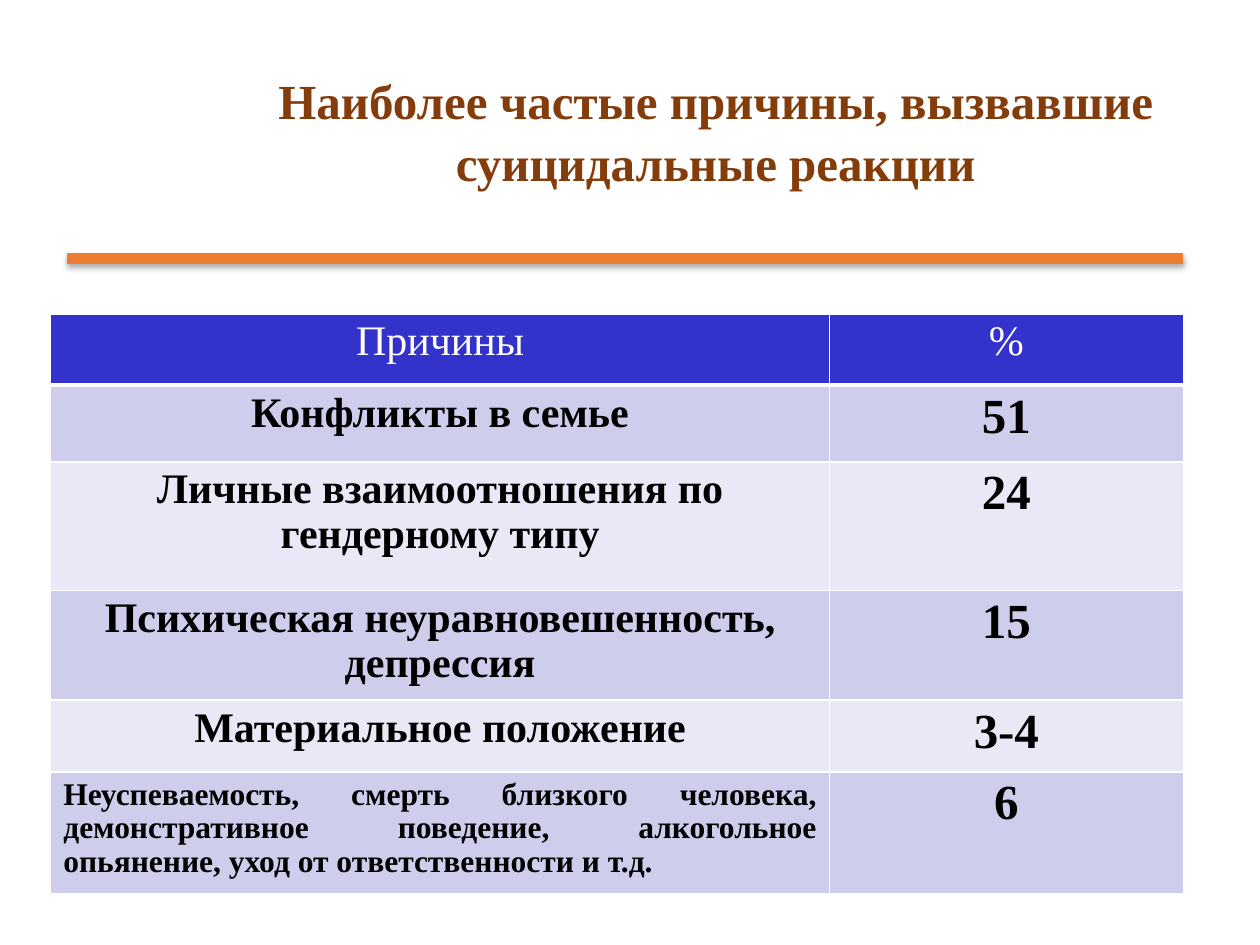
import pptx
import pptx.dml.color
import pptx.enum.shapes
import pptx.enum.text
import pptx.oxml
import pptx.oxml.ns
import pptx.util

Pt = pptx.util.Pt
ALIGN = pptx.enum.text.PP_ALIGN
NAMESPACE = pptx.oxml.ns.nsdecls("a")


def color(value):
    return pptx.dml.color.RGBColor.from_string(value)


def write(frame, text, size=24, fill="000000", bold=True, align=ALIGN.CENTER, spacing=0.96):
    frame.word_wrap = True
    para = frame.paragraphs[0]
    para.alignment = align
    para.line_spacing = spacing
    span = para.add_run()
    span.text = text
    span.font.name = "Times New Roman"
    span.font.size = Pt(size)
    span.font.bold = bold
    span.font.color.rgb = color(fill)


deck = pptx.Presentation()
deck.slide_width, deck.slide_height = Pt(720), Pt(540)
page = deck.slides.add_slide(deck.slide_layouts[6])

# Title
box = page.shapes.add_textbox(Pt(147.6), Pt(31.7), Pt(522.7), Pt(84.2))
box.text_frame.vertical_anchor = pptx.enum.text.MSO_ANCHOR.MIDDLE
write(box.text_frame, "Наиболее частые причины, вызвавшие суицидальные реакции",
      size=28, fill="843C0B", spacing=1.05)

# Orange rule with a soft shadow
rule = page.shapes.add_connector(pptx.enum.shapes.MSO_CONNECTOR.STRAIGHT,
                                 Pt(38.2), Pt(147.6), Pt(676.1), Pt(147.6))
rule.line.color.rgb = color("ED7D31")
rule.line.width = Pt(6)
rule._element.spPr.append(pptx.oxml.parse_xml(
    f'<a:effectLst {NAMESPACE}><a:outerShdw blurRad="{Pt(3.1)}" dist="{Pt(1.8)}" '
    'dir="5400000" rotWithShape="0"><a:srgbClr val="000000"><a:alpha val="35000"/>'
    '</a:srgbClr></a:outerShdw></a:effectLst>'))

# Table of causes
rows = [
    ("Причины", "%", 40.8),
    ("Конфликты в семье", "51", 43.9),
    ("Личные взаимоотношения по гендерному типу", "24", 73.6),
    ("Психическая неуравновешенность, депрессия", "15", 60.6),
    ("Материальное положение", "3-4", 41.1),
    ("Неуспеваемость, смерть близкого человека, демонстративное поведение, "
     "алкогольное опьянение, уход от ответственности и т.д.", "6", 66.3),
]
height = sum(row[2] for row in rows)
table = page.shapes.add_table(len(rows), 2, Pt(29), Pt(179.3), Pt(647.2), Pt(height)).table
table.columns[0].width, table.columns[1].width = Pt(445), Pt(202.2)

for row_index, (cause, share, row_height) in enumerate(rows):
    table.rows[row_index].height = Pt(row_height)
    header = row_index == 0
    last = row_index == len(rows) - 1
    band = "3333CC" if header else ("E8E8F6", "CECEEC")[row_index % 2]
    for column_index, text in enumerate((cause, share)):
        cell = table.cell(row_index, column_index)
        # White borders, heavier under the header
        for side in "LRTB":
            width = 3 if header and side == "B" else 1
            cell._tc.get_or_add_tcPr().append(pptx.oxml.parse_xml(
                f'<a:ln{side} {NAMESPACE} w="{Pt(width)}"><a:solidFill>'
                f'<a:srgbClr val="FFFFFF"/></a:solidFill></a:ln{side}>'))
        cell.fill.solid()
        cell.fill.fore_color.rgb = color(band)
        if header:
            write(cell.text_frame, text, fill="FFFFFF", bold=False)
        elif column_index == 1:
            write(cell.text_frame, text, size=28)
        elif last:
            write(cell.text_frame, text, size=18, align=ALIGN.JUSTIFY)
        else:
            write(cell.text_frame, text)

deck.save("out.pptx")
